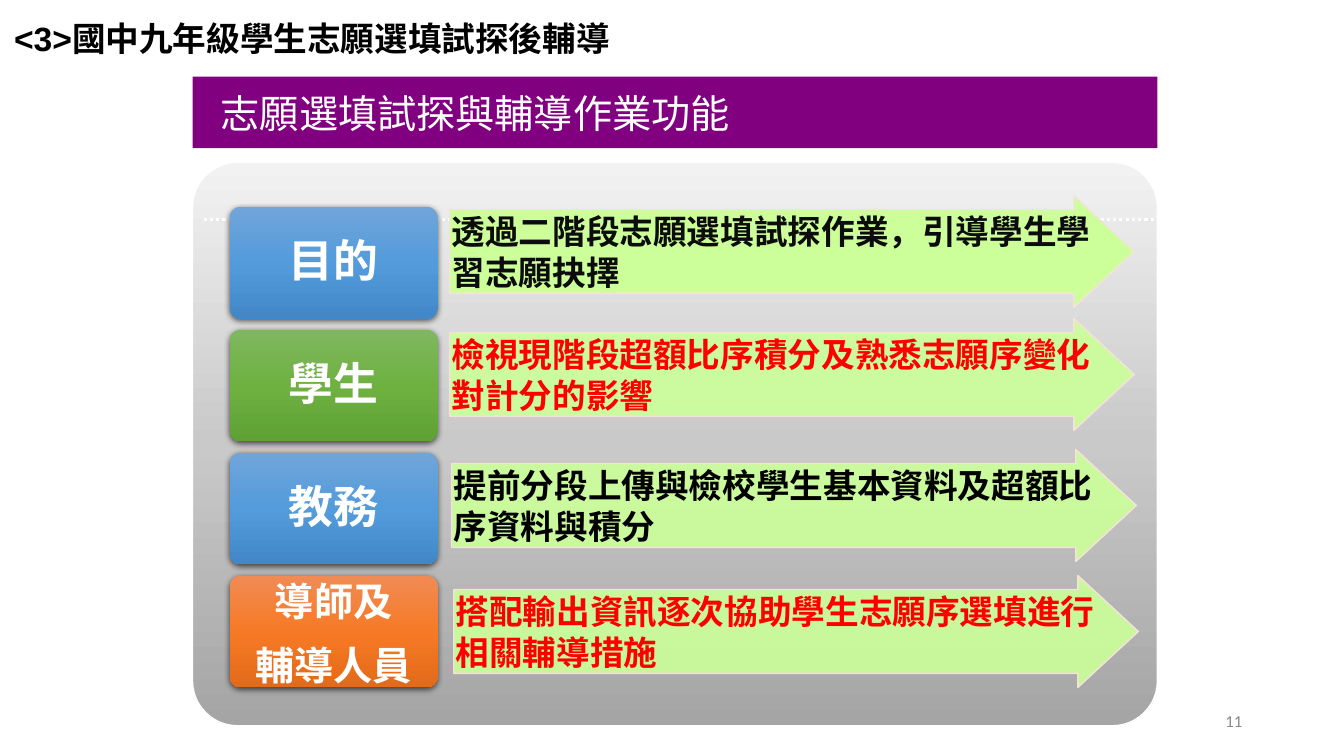
from dataclasses import dataclass

from lxml.etree import SubElement
from pptx import Presentation
from pptx.dml.color import RGBColor
from pptx.enum.dml import MSO_LINE
from pptx.enum.shapes import MSO_CONNECTOR, MSO_SHAPE
from pptx.enum.text import MSO_ANCHOR, PP_ALIGN
from pptx.oxml.ns import qn
from pptx.shapes.autoshape import Shape
from pptx.slide import Slide
from pptx.text.text import TextFrame
from pptx.util import Inches, Pt


@dataclass(frozen=True)
class Theme:
    latin_font: str = "Arial"
    chinese_font: str = "Noto Sans CJK TC"
    number_font: str = "Calibri"
    black: str = "000000"
    white: str = "FFFFFF"
    red: str = "FF0000"
    purple: str = "800080"
    gray: str = "888888"
    arrow_fill: str = "CCFF99"
    arrow_line: str = "F7E1DB"
    panel: tuple[str, ...] = ("F2F2F2", "C9C9C9", "A5A5A5")
    blue: tuple[str, ...] = ("70A5DA", "539BDB", "4288C8")
    green: tuple[str, ...] = ("7FB75F", "6EB141", "5FA134")
    orange: tuple[str, ...] = ("F08B54", "F67A26", "E36A18")
    number_size: int = 12
    body_size: int = 24
    banner_size: int = 28
    long_label_size: int = 28
    label_size: int = 32


@dataclass(frozen=True)
class Row:
    label: str
    label_colors: tuple[str, ...]
    description: str
    text_color: str
    arrow_left: float
    arrow_top: float
    arrow_opacity: int = 90


THEME = Theme()
ROW_HEIGHT = 1.11
LABEL_TOP = 2.05
LABEL_STEP = 1.22
ROWS = [
    Row("目的", THEME.blue, "透過二階段志願選填試探作業，引導學生學習志願抉擇",
        "0C0C0C", 4.46, 1.94, 100),
    Row("學生", THEME.green, "檢視現階段超額比序積分及熟悉志願序變化對計分的影響",
        THEME.red, 4.46, 3.16),
    Row("教務", THEME.blue, "提前分段上傳與檢校學生基本資料及超額比序資料與積分",
        THEME.black, 4.48, 4.46),
    Row("導師及\n輔導人員", THEME.orange, "搭配輸出資訊逐次協助學生志願序選填進行相關輔導措施",
        THEME.red, 4.5, 5.71),
]


def set_text(frame: TextFrame, text: str, font: str, size: int, color: str,
             bold: bool = False, align: PP_ALIGN = PP_ALIGN.LEFT,
             anchor: MSO_ANCHOR = MSO_ANCHOR.MIDDLE) -> None:
    frame.text = text
    frame.word_wrap = True
    frame.vertical_anchor = anchor
    for paragraph in frame.paragraphs:
        paragraph.alignment = align
        for run in paragraph.runs:
            run.font.name = font
            run.font.size = Pt(size)
            run.font.bold = bold
            run.font.color.rgb = RGBColor.from_string(color)


def set_margins(frame: TextFrame, left: float, right: float) -> None:
    frame.margin_left, frame.margin_right = Inches(left), Inches(right)
    frame.margin_top = frame.margin_bottom = 0


def add_box(slide: Slide, kind: MSO_SHAPE, left: float, top: float,
            width: float, height: float) -> Shape:
    shape = slide.shapes.add_shape(
        kind, Inches(left), Inches(top), Inches(width), Inches(height))
    shape.shadow.inherit = False
    shape.line.fill.background()
    return shape


def fill_gradient(shape: Shape, colors: tuple[str, ...]) -> None:
    shape.fill.gradient()
    shape.fill.gradient_angle = 270
    stops = shape.element.spPr.find(qn("a:gradFill")).find(qn("a:gsLst"))
    for stop in list(stops):
        stops.remove(stop)
    for index, color in enumerate(colors):
        position = 100000 * index // (len(colors) - 1)
        stop = SubElement(stops, qn("a:gs"), pos=str(position))
        SubElement(stop, qn("a:srgbClr"), val=color)


def set_outline(shape: Shape, color: str) -> None:
    shape.line.color.rgb = RGBColor.from_string(color)
    shape.line.width = Pt(1)


def add_soft_shadow(shape: Shape) -> None:
    effects = shape.element.spPr.find(qn("a:effectLst"))
    shadow = SubElement(effects, qn("a:outerShdw"), blurRad=str(Pt(4.5)),
                        dist=str(Pt(1.5)), dir="5400000", rotWithShape="0")
    color = SubElement(shadow, qn("a:srgbClr"), val=THEME.black)
    SubElement(color, qn("a:alpha"), val="63000")


def add_title(slide: Slide) -> None:
    title = slide.shapes.title
    title.left, title.top = Inches(0.04), Inches(0.13)
    title.width, title.height = Inches(6.67), Inches(0.5)
    set_text(title.text_frame, "<3>國中九年級學生志願選填試探後輔導", THEME.latin_font,
             THEME.body_size, THEME.black, True, anchor=MSO_ANCHOR.TOP)


def add_panel(slide: Slide) -> None:
    panel = add_box(slide, MSO_SHAPE.ROUNDED_RECTANGLE, 1.91, 1.61, 9.57, 5.59)
    panel.adjustments[0] = 0.08
    fill_gradient(panel, THEME.panel)
    set_outline(panel, THEME.white)


def add_banner(slide: Slide) -> None:
    banner = add_box(slide, MSO_SHAPE.RECTANGLE, 1.91, 0.76, 9.57, 0.71)
    banner.fill.solid()
    banner.fill.fore_color.rgb = RGBColor.from_string(THEME.purple)
    set_text(banner.text_frame, "志願選填試探與輔導作業功能", THEME.latin_font,
             THEME.banner_size, THEME.white)
    banner.text_frame.margin_left = Inches(0.28)


def add_dotted_line(slide: Slide) -> None:
    line = slide.shapes.add_connector(
        MSO_CONNECTOR.STRAIGHT, Inches(2.02), Inches(2.18), Inches(11.56), Inches(2.18))
    line.line.color.rgb = RGBColor.from_string(THEME.white)
    line.line.width = Pt(2.25)
    line.line.dash_style = MSO_LINE.ROUND_DOT
    SubElement(line.element.spPr, qn("a:effectLst"))


def add_arrow(slide: Slide, row: Row) -> None:
    arrow = add_box(slide, MSO_SHAPE.RIGHT_ARROW, row.arrow_left, row.arrow_top,
                    6.79, ROW_HEIGHT)
    arrow.adjustments[0], arrow.adjustments[1] = 0.75, 0.54
    arrow.fill.solid()
    arrow.fill.fore_color.rgb = RGBColor.from_string(THEME.arrow_fill)
    color = arrow.element.spPr.find(qn("a:solidFill")).find(qn("a:srgbClr"))
    SubElement(color, qn("a:alpha"), val=str(row.arrow_opacity * 1000))
    set_outline(arrow, THEME.arrow_line)
    set_text(arrow.text_frame, row.description, THEME.chinese_font,
             THEME.body_size, row.text_color, True)
    set_margins(arrow.text_frame, 0.02, -0.05)


def add_label(slide: Slide, row: Row, top: float) -> None:
    label = add_box(slide, MSO_SHAPE.ROUNDED_RECTANGLE, 2.28, top, 2.06, ROW_HEIGHT)
    label.adjustments[0] = 0.1
    fill_gradient(label, row.label_colors)
    add_soft_shadow(label)
    is_long = "\n" in row.label
    set_text(label.text_frame, row.label, THEME.chinese_font,
             THEME.long_label_size if is_long else THEME.label_size,
             THEME.white, True, PP_ALIGN.CENTER)
    set_margins(label.text_frame, 0.1, 0.1)
    for index, paragraph in enumerate(label.text_frame.paragraphs):
        paragraph.line_spacing = 1.07 if is_long else 0.9
        paragraph.space_before = Pt(9.8 if index else 0)


def add_slide_number(slide: Slide) -> None:
    number = slide.shapes.add_textbox(Inches(9.42), Inches(6.95), Inches(3), Inches(0.4))
    set_text(number.text_frame, "11", THEME.number_font, THEME.number_size,
             THEME.gray, align=PP_ALIGN.RIGHT)


def main() -> None:
    presentation = Presentation()
    presentation.slide_width, presentation.slide_height = Inches(13.33), Inches(7.5)
    slide = presentation.slides.add_slide(presentation.slide_layouts[5])
    add_title(slide)
    add_panel(slide)
    add_banner(slide)
    add_dotted_line(slide)
    for index, row in enumerate(ROWS):
        add_arrow(slide, row)
        add_label(slide, row, LABEL_TOP + index * LABEL_STEP)
    add_slide_number(slide)
    presentation.save("out.pptx")


if __name__ == "__main__":
    main()
